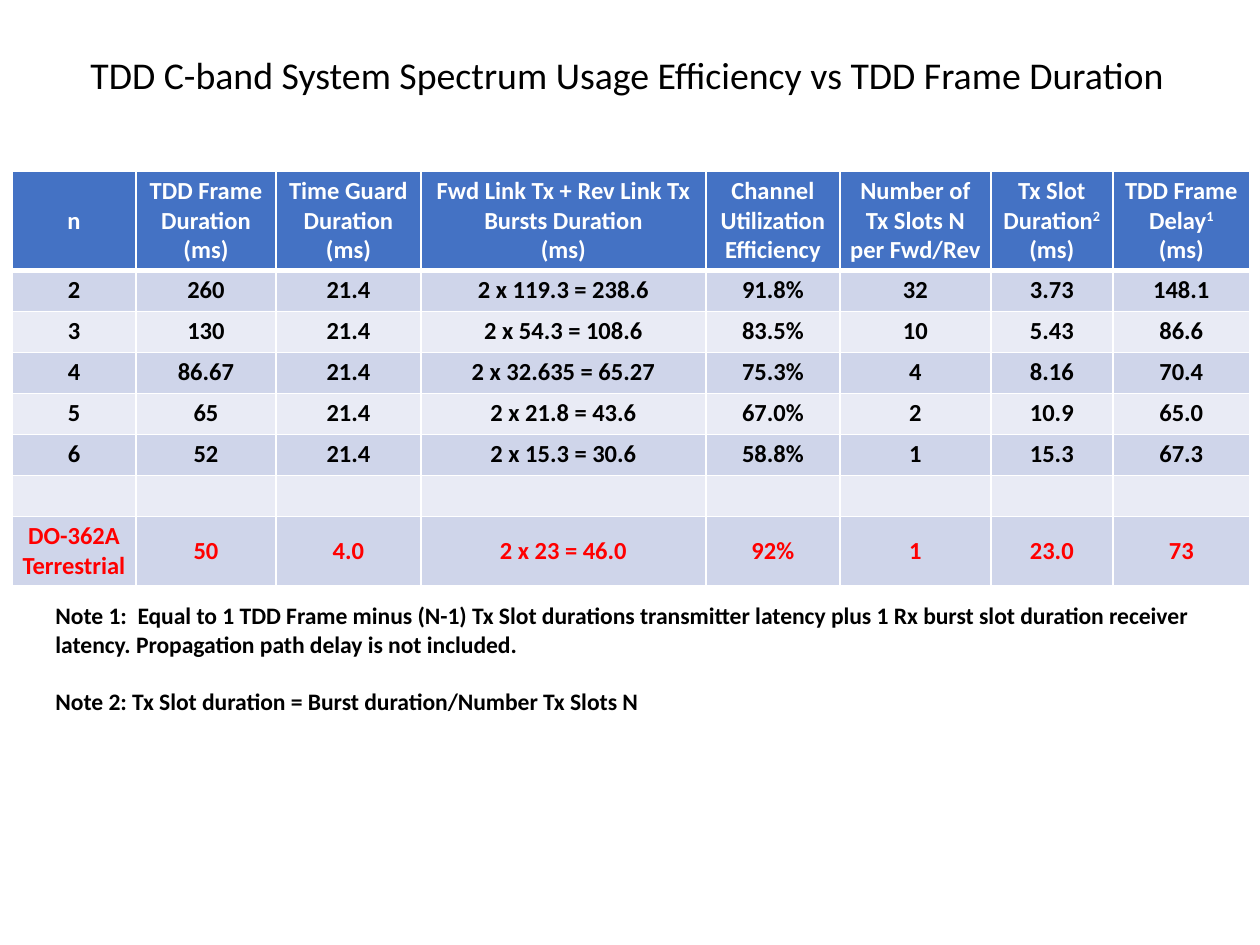
"""Build a slide comparing spectrum efficiency across TDD frame durations."""
from lxml import etree
from pptx import Presentation
from pptx.dml.color import RGBColor
from pptx.enum.text import MSO_ANCHOR, PP_ALIGN
from pptx.oxml.ns import qn
from pptx.util import Emu, Pt

MIDDLE = MSO_ANCHOR.MIDDLE
CENTER = PP_ALIGN.CENTER
PX = 914400 // 126
FONT = "Calibri"
COLORS = {
    "white": "FFFFFF", "black": "000000", "red": "FF0000",
    "head": "4472C4", "dark": "CFD5EA", "light": "E9EBF5",
}


def add_run(para, text, size, color, bold=True):
    run = para.add_run()
    run.text = text
    run.font.name = FONT
    run.font.size = Pt(size)
    run.font.bold = bold
    run.font.color.rgb = RGBColor.from_string(COLORS[color])
    return run


def add_box(left, top, width, height):
    box = slide.shapes.add_textbox(*(Emu(n * PX) for n in (left, top, width, height)))
    box.text_frame.word_wrap = True
    return box.text_frame


prs = Presentation()
prs.slide_width = Emu(1260 * PX)
prs.slide_height = Emu(945 * PX)
slide = prs.slides.add_slide(prs.slide_layouts[6])

widths = [124, 140, 145, 285, 134, 151, 122, 137]
heights = [99] + [41] * 6 + [69]
rows = [
    ["n", "TDD Frame Duration\n(ms)", "Time Guard Duration\n(ms)",
     "Fwd Link Tx + Rev Link Tx Bursts Duration\n(ms)",
     "Channel Utilization Efficiency", "Number of Tx Slots N per Fwd/Rev",
     "Tx Slot Duration^2\n(ms)", "TDD Frame Delay^1\n(ms)"],
    ["2", "260", "21.4", "2 x 119.3 = 238.6", "91.8%", "32", "3.73", "148.1"],
    ["3", "130", "21.4", "2 x 54.3 = 108.6", "83.5%", "10", "5.43", "86.6"],
    ["4", "86.67", "21.4", "2 x 32.635 = 65.27", "75.3%", "4", "8.16", "70.4"],
    ["5", "65", "21.4", "2 x 21.8 = 43.6", "67.0%", "2", "10.9", "65.0"],
    ["6", "52", "21.4", "2 x 15.3 = 30.6", "58.8%", "1", "15.3", "67.3"],
    [""] * 8,
    ["DO-362A Terrestrial", "50", "4.0", "2 x 23 = 46.0", "92%", "1", "23.0", "73"],
]
last = len(rows) - 1

frame = slide.shapes.add_table(
    len(rows), len(widths), Emu(12 * PX), Emu(171 * PX),
    Emu(sum(widths) * PX), Emu(sum(heights) * PX))
table = frame.table
for col, width in zip(table.columns, widths):
    col.width = Emu(width * PX)
for row, height in zip(table.rows, heights):
    row.height = Emu(height * PX)

for r, row in enumerate(rows):
    fill = "head" if r == 0 else "dark" if r % 2 else "light"
    color = {0: "white", last: "red"}.get(r, "black")
    for c, text in enumerate(row):
        cell = table.cell(r, c)
        cell.margin_left = cell.margin_right = Emu(9 * PX)
        cell.margin_top = cell.margin_bottom = Emu(5 * PX)
        if r == last or text == "n":
            cell.vertical_anchor = MIDDLE
        props = cell._tc.get_or_add_tcPr()
        for side in "LRTB":
            thick = (r, side) in [(0, "B"), (1, "T")]
            line = etree.SubElement(props, qn("a:ln" + side), w=str(Pt(3 if thick else 1)))
            solid = etree.SubElement(line, qn("a:solidFill"))
            etree.SubElement(solid, qn("a:srgbClr"), val=COLORS["white"])
        cell.fill.solid()
        cell.fill.fore_color.rgb = RGBColor.from_string(COLORS[fill])
        for i, part in enumerate(text.split("\n")):
            para = cell.text_frame.add_paragraph() if i else cell.text_frame.paragraphs[0]
            para.alignment = CENTER
            base, _, mark = part.partition("^")
            if base:
                add_run(para, base, 14, color)
            else:
                etree.SubElement(para._p, qn("a:endParaRPr"), sz="1400")
            if mark:
                add_run(para, mark, 14, color).font._element.set("baseline", "30000")

title = add_box(78, 55, 1143, 44)
title.vertical_anchor = MIDDLE
title.paragraphs[0].line_spacing = 0.9
add_run(title.paragraphs[0],
        "TDD C-band System Spectrum Usage Efficiency vs TDD Frame Duration",
        21.6, "black", False)

notes = add_box(43, 595, 1196, 127)
add_run(notes.paragraphs[0],
        "Note 1:\u00a0 Equal to 1 TDD Frame minus (N-1) Tx Slot durations transmitter "
        "latency plus 1 Rx burst slot duration receiver latency. "
        "Propagation path delay is not included.".replace("\u00a0", " "), 13.5, "black")
para = notes.add_paragraph()
para.space_before = Pt(16.5)
add_run(para, "Note 2: Tx Slot duration = Burst duration/Number Tx Slots N", 13.5, "black")

prs.save("out.pptx")
